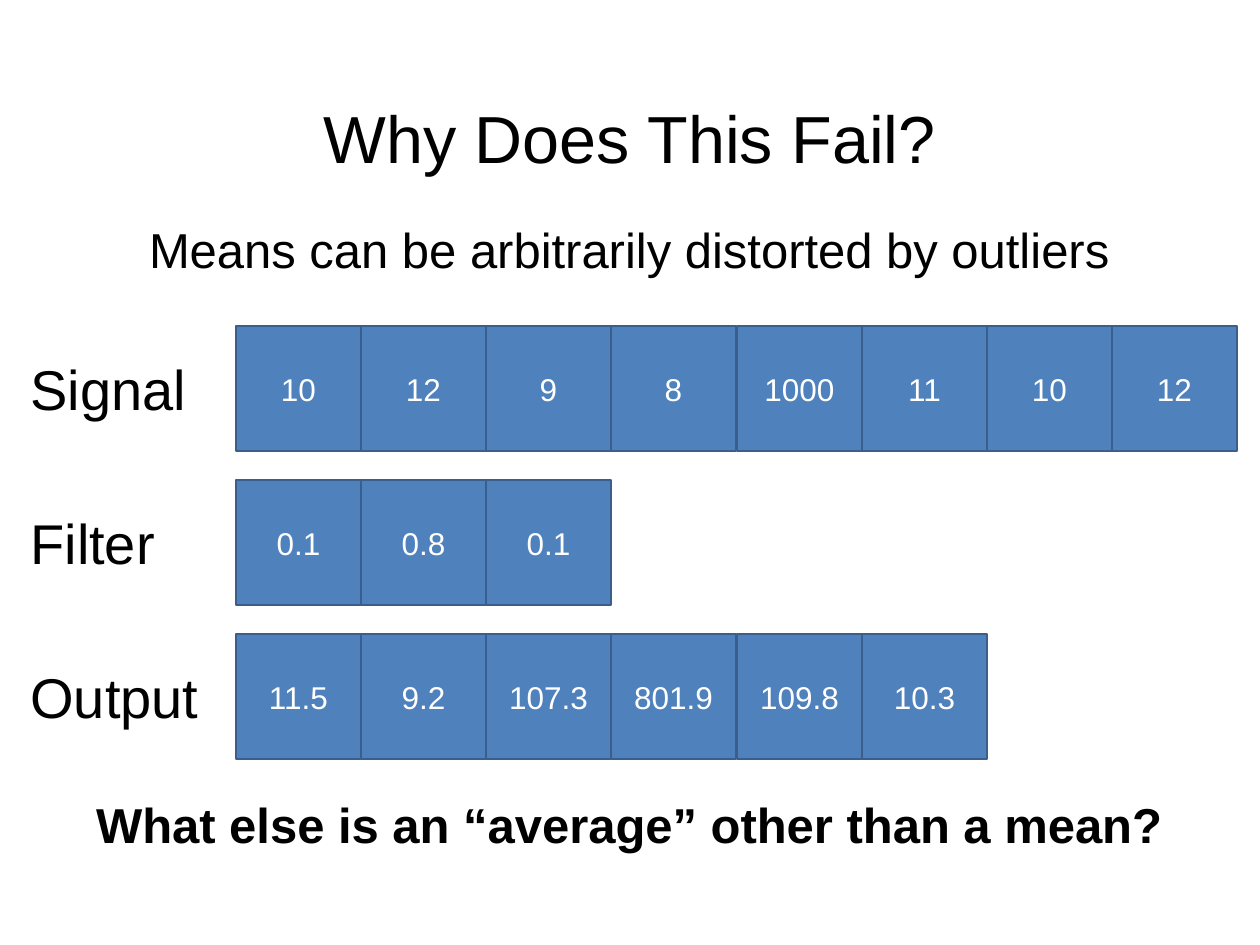
from pptx import Presentation
from pptx.dml.color import RGBColor as RGB
from pptx.enum.shapes import MSO_SHAPE as SHAPE
from pptx.enum.text import MSO_ANCHOR as ANCHOR, MSO_AUTO_SIZE as FIT, PP_ALIGN as ALIGN
from pptx.util import Pt

PX = 914400 / 126
THEME = {
    "font": "Arial",
    "text": RGB.from_string("000000"),
    "cell": RGB.from_string("4F81BD"),
    "edge": RGB.from_string("3A5F8C"),
    "cell_text": RGB.from_string("FFFFFF"),
    "title_size": Pt(38),
    "label_size": Pt(32),
    "note_size": Pt(28),
    "cell_size": Pt(18),
}


def px(*lengths):
    return [round(n * PX) for n in lengths]


def write(s, text, size, color=THEME["text"], align=ALIGN.CENTER,
          anchor=ANCHOR.MIDDLE, fit=FIT.NONE, bold=False):
    tf = s.text_frame
    frame = {"word_wrap": True, "auto_size": fit, "vertical_anchor": anchor}
    for name, value in frame.items():
        setattr(tf, name, value)
    p = tf.paragraphs[0]
    p.alignment = align
    r = p.add_run()
    r.text = text
    font = {"name": THEME["font"], "size": size, "bold": bold}
    for name, value in font.items():
        setattr(r.font, name, value)
    r.font.color.rgb = color
    return p


prs = Presentation()
prs.slide_width, prs.slide_height = px(1260, 945)
slide = prs.slides.add_slide(prs.slide_layouts[5])

title = slide.shapes.title
title.left, title.top, title.width, title.height = px(87, 50, 1086, 183)
p = write(title, "Why Does This Fail?", THEME["title_size"])
p.line_spacing = 0.9

rows = [
    ("Signal", ["10", "12", "9", "8", "1000", "11", "10", "12"]),
    ("Filter", ["0.1", "0.8", "0.1"]),
    ("Output", ["11.5", "9.2", "107.3", "801.9", "109.8", "10.3"]),
]
LEFT, TOP, CELL, ROW_STEP = 236, 326, 125, 154
FULL_WIDTH, MAX_CELLS = 1002, 8

for i, (label, values) in enumerate(rows):
    top = TOP + i * ROW_STEP
    group = slide.shapes.add_group_shape()
    s = group.shapes.add_textbox(*px(18, top + 22, 195, 81))
    write(s, label, THEME["label_size"], align=ALIGN.LEFT,
          anchor=ANCHOR.TOP, fit=FIT.SHAPE_TO_FIT_TEXT)
    for j, value in enumerate(values):
        left = LEFT + j * FULL_WIDTH // MAX_CELLS
        s = group.shapes.add_shape(SHAPE.RECTANGLE, *px(left, top, CELL, CELL))
        s.shadow.inherit = False
        s.fill.solid()
        s.fill.fore_color.rgb = THEME["cell"]
        s.line.color.rgb = THEME["edge"]
        s.line.width = Pt(1)
        write(s, value, THEME["cell_size"], THEME["cell_text"])

notes = [
    (213, "Means can be arbitrarily distorted by outliers", False),
    (788, "What else is an “average” other than a mean?", True),
]
for top, text, bold in notes:
    s = slide.shapes.add_textbox(*px(60, top, 1138, 72))
    write(s, text, THEME["note_size"], anchor=ANCHOR.TOP,
          fit=FIT.SHAPE_TO_FIT_TEXT, bold=bold)

prs.save("out.pptx")
